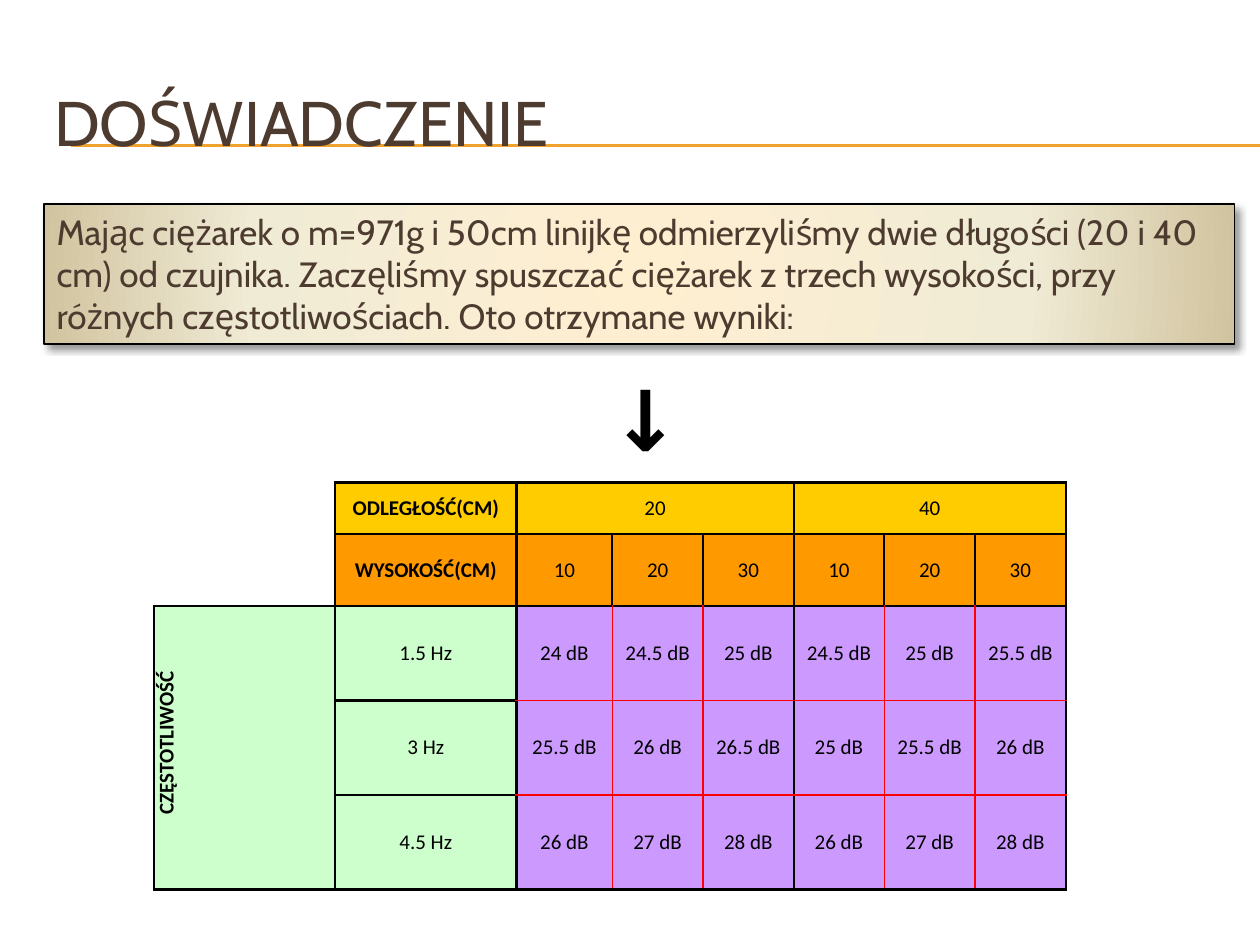
import lxml.etree
import pptx
import pptx.dml.color
import pptx.enum.shapes
import pptx.enum.text
import pptx.oxml
import pptx.oxml.ns
import pptx.util

COLORS = {
    "black": "000000", "brown": "4E3B30", "rule": "F0A22E",
    "distance": "FFCC00", "height": "FF9900", "frequency": "CCFFCC",
    "reading": "CC99FF", "inner": "FF0000",
    "cream": "FFEFD1", "ivory": "F0EBD5", "sand": "D1C39F",
}
COLUMN_WIDTHS = [1.44, 1.44, 0.76] + [0.72] * 5
ROW_HEIGHTS = [0.41, 0.57, 0.75, 0.75, 0.75]
ROWS = [
    ["", "ODLEGŁOŚĆ(CM)", "20", "", "", "40", "", ""],
    ["", "WYSOKOŚĆ(CM)", "10", "20", "30", "10", "20", "30"],
    ["CZĘSTOTLIWOŚĆ", "1.5 Hz", "24 dB", "24.5 dB", "25 dB", "24.5 dB", "25 dB", "25.5 dB"],
    ["", "3 Hz", "25.5 dB", "26 dB", "26.5 dB", "25 dB", "25.5 dB", "26 dB"],
    ["", "4.5 Hz", "26 dB", "27 dB", "28 dB", "26 dB", "27 dB", "28 dB"],
]
HEADER_ROWS = 2
LABEL_COLUMNS = 2
GROUP_SIZE = 3
NAMESPACE = pptx.oxml.ns.nsdecls("a")


def color(name):
    return pptx.dml.color.RGBColor.from_string(COLORS[name])


def inches(box):
    return [pptx.util.Inches(length) for length in box]


def add_span(para, text, size, font, tint, bold=False):
    span = para.add_run()
    span.text = text
    span.font.size = pptx.util.Pt(size)
    span.font.name = font
    span.font.bold = bold
    span.font.color.rgb = color(tint)


def add_heading(page, box):
    left, top, width, height = box
    for offset in (0.65, 0.66):
        ends = inches((left + 0.23, top + offset, 10, top + offset))
        rule = page.shapes.add_connector(pptx.enum.shapes.MSO_CONNECTOR.STRAIGHT, *ends)
        rule.line.color.rgb = color("rule")
        rule.line.width = pptx.util.Pt(0.75)
        lxml.etree.SubElement(rule._element.spPr, pptx.oxml.ns.qn("a:effectLst"))
    title = page.shapes.title
    title.left, title.top, title.width, title.height = inches(box)
    page.shapes._spTree.append(title._element)  # in front of the rules
    title.text_frame.vertical_anchor = pptx.enum.text.MSO_ANCHOR.MIDDLE
    para = title.text_frame.paragraphs[0]
    para.alignment = pptx.enum.text.PP_ALIGN.LEFT
    add_span(para, "DOŚWIADCZENIE", 36, "Cabin", "brown")


def add_description(page, box):
    panel = page.shapes.add_shape(pptx.enum.shapes.MSO_SHAPE.RECTANGLE, *inches(box))
    panel.line.color.rgb = color("black")
    panel.line.width = pptx.util.Pt(0.75)
    stops = "".join(
        f'<a:gs pos="{share * 1000}"><a:srgbClr val="{COLORS[name]}"/></a:gs>'
        for share, name in ((0, "cream"), (65, "ivory"), (100, "sand")))
    properties = panel._element.spPr
    properties.insert(2, pptx.oxml.parse_xml(
        f'<a:gradFill {NAMESPACE} rotWithShape="1"><a:gsLst>{stops}</a:gsLst><a:path path="circle">'
        '<a:fillToRect l="50000" t="50000" r="50000" b="50000"/></a:path></a:gradFill>'))
    properties.append(pptx.oxml.parse_xml(
        f'<a:effectLst {NAMESPACE}><a:outerShdw blurRad="{pptx.util.Pt(4)}" dist="{pptx.util.Pt(3)}" '
        f'dir="2700000" algn="tl" rotWithShape="0"><a:srgbClr val="{COLORS["black"]}">'
        '<a:alpha val="40000"/></a:srgbClr></a:outerShdw></a:effectLst>'))
    frame = panel.text_frame
    frame.word_wrap = True
    frame.auto_size = pptx.enum.text.MSO_AUTO_SIZE.SHAPE_TO_FIT_TEXT
    frame.vertical_anchor = pptx.enum.text.MSO_ANCHOR.TOP
    para = frame.paragraphs[0]
    para.alignment = pptx.enum.text.PP_ALIGN.LEFT
    add_span(para, "Mając ciężarek o m=971g i 50cm linijkę odmierzyliśmy dwie długości (20 i 40 cm) "
             "od czujnika. Zaczęliśmy spuszczać ciężarek z trzech wysokości, przy różnych "
             "częstotliwościach. Oto otrzymane wyniki:", 20, "Cabin", "brown")


def add_arrow(page, box):
    frame = page.shapes.add_textbox(*inches(box)).text_frame
    frame.word_wrap = True
    frame.auto_size = pptx.enum.text.MSO_AUTO_SIZE.SHAPE_TO_FIT_TEXT
    frame._txBody.bodyPr.set("vert", "vert")
    add_span(frame.paragraphs[0], "→", 48, "Cabin", "black", bold=True)


def cell_fill(row, column):
    if row < HEADER_ROWS:
        return None if column == 0 else ("distance", "height")[row]
    return "frequency" if column < LABEL_COLUMNS else "reading"


def cell_borders(row, column):
    """Give colour and width per side; None leaves the side undrawn."""
    outer, inner = ("black", 1.5), ("inner", 1)
    if cell_fill(row, column) is None:
        return {"L": None, "R": outer, "T": None, "B": outer if row == HEADER_ROWS - 1 else None}
    if row < HEADER_ROWS or column < LABEL_COLUMNS:
        return dict.fromkeys("LRTB", outer)
    place = (column - LABEL_COLUMNS) % GROUP_SIZE
    return {
        "L": outer if place == 0 else inner,
        "R": outer if place == GROUP_SIZE - 1 else inner,
        "T": outer if row == HEADER_ROWS else inner,
        "B": outer if row == len(ROWS) - 1 else inner,
    }


def draw_borders(cell, borders):
    properties = cell._tc.get_or_add_tcPr()
    for side, border in borders.items():
        line = lxml.etree.SubElement(properties, pptx.oxml.ns.qn(f"a:ln{side}"))
        if border is None:
            lxml.etree.SubElement(line, pptx.oxml.ns.qn("a:noFill"))
            continue
        name, width = border
        line.set("w", str(pptx.util.Pt(width)))
        fill = lxml.etree.SubElement(line, pptx.oxml.ns.qn("a:solidFill"))
        lxml.etree.SubElement(fill, pptx.oxml.ns.qn("a:srgbClr")).set("val", COLORS[name])


def format_cell(cell, row, column):
    draw_borders(cell, cell_borders(row, column))
    fill = cell_fill(row, column)
    if fill is None:
        cell.fill.background()
    else:
        cell.fill.solid()
        cell.fill.fore_color.rgb = color(fill)
    cell.margin_left = cell.margin_right = pptx.util.Inches(0.05)
    cell.margin_top = cell.margin_bottom = 0
    cell.vertical_anchor = pptx.enum.text.MSO_ANCHOR.MIDDLE
    text = ROWS[row][column]
    if text:
        para = cell.text_frame.paragraphs[0]
        para.alignment = pptx.enum.text.PP_ALIGN.CENTER
        bold = column == 0 or (column == 1 and row < HEADER_ROWS)
        add_span(para, text, 12, "Calibri", "black", bold)


def add_results(page, box):
    left, top, width, height = box
    table = page.shapes.add_table(len(ROWS), len(COLUMN_WIDTHS), *inches(box)).table
    table.first_row = table.horz_banding = False
    for column, share in zip(table.columns, COLUMN_WIDTHS):
        column.width = pptx.util.Inches(width * share / sum(COLUMN_WIDTHS))
    for row, share in zip(table.rows, ROW_HEIGHTS):
        row.height = pptx.util.Inches(height * share / sum(ROW_HEIGHTS))
    for row in range(len(ROWS)):
        for column in range(len(COLUMN_WIDTHS)):
            format_cell(table.cell(row, column), row, column)
    for first in range(LABEL_COLUMNS, len(COLUMN_WIDTHS), GROUP_SIZE):
        table.cell(0, first).merge(table.cell(0, first + GROUP_SIZE - 1))
    frequency = table.cell(HEADER_ROWS, 0)
    frequency.merge(table.cell(len(ROWS) - 1, 0))
    frequency._tc.get_or_add_tcPr().set("vert", "vert270")
    para_properties = frequency.text_frame.paragraphs[0]._p.get_or_add_pPr()
    para_properties.set("marL", str(pptx.util.Inches(0.08)))


def main():
    deck = pptx.Presentation()
    deck.slide_width, deck.slide_height = inches((10, 7.5))
    page = deck.slides.add_slide(deck.slide_layouts.get_by_name("Title Only"))
    add_heading(page, (0.33, 0.5, 9.5, 0.92))
    add_results(page, (1.22, 3.83, 7.24, 3.23))
    add_description(page, (0.35, 1.62, 9.45, 1.11))
    add_arrow(page, (4.62, 2.96, 1.01, 0.87))
    deck.save("out.pptx")


if __name__ == "__main__":
    main()
